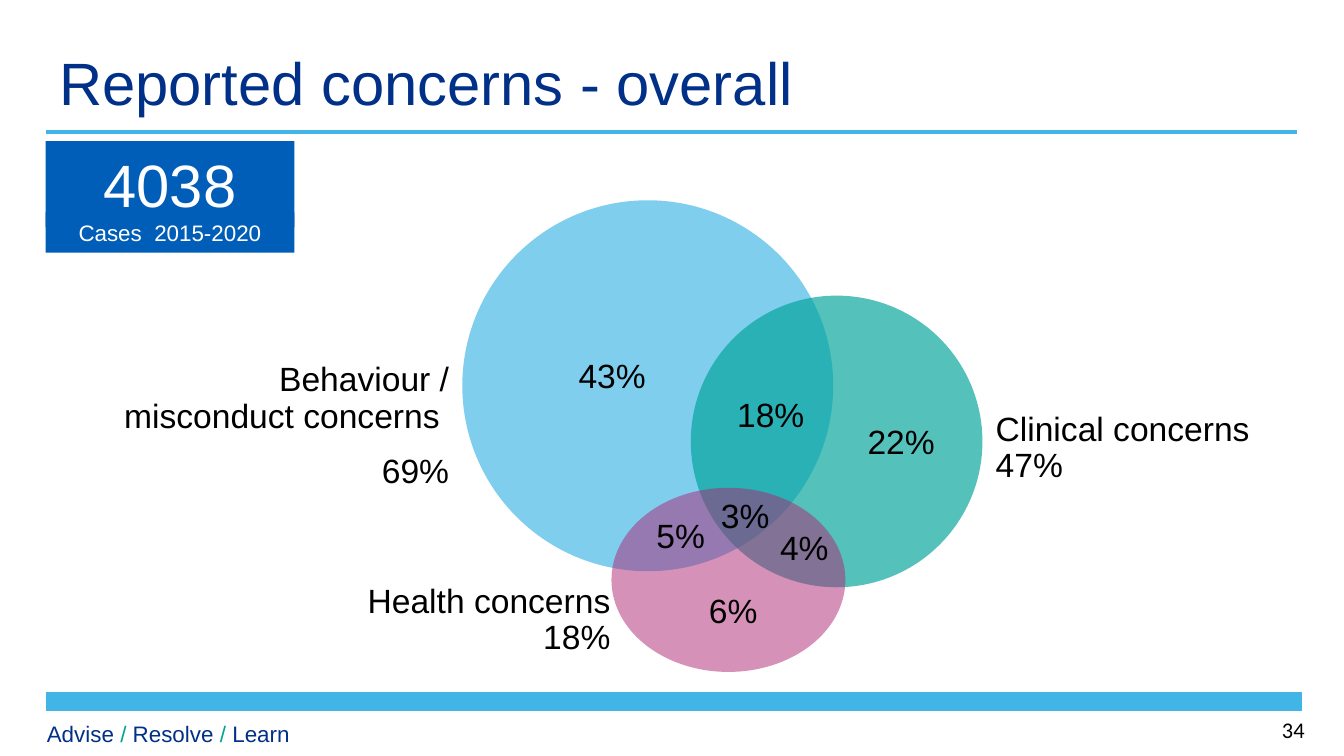
from dataclasses import dataclass

from lxml import etree
from pptx import Presentation
from pptx.dml.color import RGBColor
from pptx.enum.shapes import MSO_CONNECTOR, MSO_SHAPE
from pptx.enum.text import MSO_ANCHOR, MSO_AUTO_SIZE, PP_ALIGN
from pptx.oxml.ns import qn
from pptx.util import Inches, Pt

LEFT, RIGHT, MID = PP_ALIGN.LEFT, PP_ALIGN.RIGHT, PP_ALIGN.CENTER
OVAL, RECT, LINE = MSO_SHAPE.OVAL, MSO_SHAPE.RECTANGLE, MSO_CONNECTOR.STRAIGHT
TOP, CENTRE = MSO_ANCHOR.TOP, MSO_ANCHOR.MIDDLE

COLORS = {
    "navy": "003087", "blue": "005EB8", "sky": "41B6E6", "teal": "00A499",
    "slash": "00A291", "pink": "AE2573", "black": "000000", "white": "FFFFFF",
}
WIDE, HIGH = Inches(10), Inches(5.625)
EDGE = 3.4


@dataclass(frozen=True)
class Box:
    """Left, top, width and height in percent of the slide."""
    x: float
    y: float
    w: float
    h: float

    def place(self) -> tuple[int, int, int, int]:
        return across(self.x), down(self.y), across(self.w), down(self.h)


@dataclass(frozen=True)
class Disc:
    box: Box
    color: str
    alpha: int


@dataclass(frozen=True)
class Share:
    """A value centred on a point, in percent of the slide."""
    text: str
    x: float
    y: float


@dataclass(frozen=True)
class Label:
    lines: tuple[str, ...]
    box: Box
    align: PP_ALIGN


@dataclass(frozen=True)
class Rule:
    y: float
    end: float
    width: float


@dataclass(frozen=True)
class Tile:
    text: str
    box: Box
    size: int


DISCS = (
    Disc(Box(34.4, 26.49, 27.6, 49.07), "sky", 67),
    Disc(Box(51.4, 39.11, 21.7, 38.58), "teal", 67),
    Disc(Box(45.5, 64.53, 17.4, 24.36), "pink", 50),
)
SHARES = (
    Share("43%", 45.55, 49.6), Share("18%", 57.35, 54.76),
    Share("5%", 50.65, 70.76), Share("3%", 55.45, 68.09),
    Share("6%", 54.55, 80.71), Share("4%", 59.85, 72.36),
    Share("22%", 67.05, 58.31),
)
LABELS = (
    Label(("Clinical concerns 47%",), Box(73.1, 53.69, 22.8, 18.84), LEFT),
    Label(("Behaviour / misconduct concerns ", "69%"),
          Box(6.7, 47.11, 27.7, 12.27), RIGHT),
    Label(("Health concerns 18%",), Box(25.6, 76.44, 20.8, 12.8), RIGHT),
)
RULES = (Rule(17.42, 96.5, 2), Rule(92.8, 96.9, 10))
TILES = (
    Tile("4038", Box(EDGE, 18.67, 18.5, 11.38), 32),
    Tile("Cases  2015-2020", Box(EDGE, 28.09, 18.5, 5.33), 12),
)
MOTTO = (("Advise ", "navy"), ("/", "slash"), (" Resolve ", "navy"),
         ("/", "slash"), (" Learn", "navy"))


def across(share: float) -> int:
    return round(WIDE * share / 100)


def down(share: float) -> int:
    return round(HIGH * share / 100)


def tint(name: str) -> RGBColor:
    return RGBColor.from_string(COLORS[name])


def style(para, size: int, color: str, align=LEFT, face="Arial") -> None:
    para.alignment = align
    para.font.size = Pt(size)
    para.font.name = face
    para.font.color.rgb = tint(color)


def add_box(slide, box: Box, wrap: bool = True):
    frame = slide.shapes.add_textbox(*box.place()).text_frame
    frame.word_wrap = wrap
    frame.vertical_anchor = TOP
    return frame


def add_shape(shapes, kind, box: Box, color: str):
    shape = shapes.add_shape(kind, *box.place())
    shape.shadow.inherit = False
    shape.fill.solid()
    shape.fill.fore_color.rgb = tint(color)
    shape.line.fill.background()
    return shape


def add_rule(slide, rule: Rule) -> None:
    y = down(rule.y)
    line = slide.shapes.add_connector(LINE, across(EDGE), y, across(rule.end), y)
    line.line.color.rgb = tint("sky")
    line.line.width = Pt(rule.width)
    etree.SubElement(line._element.spPr, qn("a:effectLst"))


def add_disc(slide, disc: Disc) -> None:
    shape = add_shape(slide.shapes, OVAL, disc.box, disc.color)
    color = shape._element.spPr.find(f"{qn('a:solidFill')}/{qn('a:srgbClr')}")
    etree.SubElement(color, qn("a:alpha")).set("val", str(disc.alpha * 1000))


def add_share(slide, share: Share) -> None:
    w, h = (7.1 if len(share.text) > 2 else 5.7), 7.11
    frame = add_box(slide, Box(share.x - w / 2, share.y - h / 2, w, h), False)
    frame.text = share.text
    style(frame.paragraphs[0], 18, "black", MID)


def add_label(slide, label: Label) -> None:
    frame = add_box(slide, label.box)
    frame.text = "\n".join(label.lines)
    for i, para in enumerate(frame.paragraphs):
        style(para, 18, "black", label.align)
        para.line_spacing = 0.9
        if i:
            para.space_before = Pt(10)


def add_tile(group, tile: Tile) -> None:
    frame = add_shape(group.shapes, RECT, tile.box, "blue").text_frame
    frame.word_wrap = True
    frame.vertical_anchor = CENTRE
    frame.text = tile.text
    style(frame.paragraphs[0], tile.size, "white", MID)


def add_title(slide) -> None:
    title = slide.shapes.title
    title.left, title.top, title.width, title.height = Box(
        EDGE, 5.87, 75.7, 9.78).place()
    frame = title.text_frame
    frame.text = "Reported concerns - overall"
    frame.auto_size = MSO_AUTO_SIZE.NONE
    frame.vertical_anchor = CENTRE
    style(frame.paragraphs[0], 32, "navy")


def add_footer(slide) -> None:
    para = add_box(slide, Box(2.5, 94.4, 24.8, 5.33)).paragraphs[0]
    style(para, 12, "navy")
    for text, color in MOTTO:
        run = para.add_run()
        run.text = text
        run.font.color.rgb = tint(color)
    page = add_box(slide, Box(94.4, 93.87, 5.5, 5.33))
    page.text = "34"
    style(page.paragraphs[0], 12, "black", face="Calibri")


def main() -> None:
    deck = Presentation()
    deck.slide_width, deck.slide_height = WIDE, HIGH
    slide = deck.slides.add_slide(deck.slide_layouts[5])

    # Frame: rules, footer and title
    for rule in RULES:
        add_rule(slide, rule)
    add_footer(slide)
    add_title(slide)

    # Venn diagram
    for disc in DISCS:
        add_disc(slide, disc)
    for share in SHARES:
        add_share(slide, share)
    for label in LABELS:
        add_label(slide, label)

    # Case count
    group = slide.shapes.add_group_shape()
    for tile in TILES:
        add_tile(group, tile)

    deck.save("out.pptx")


if __name__ == "__main__":
    main()
